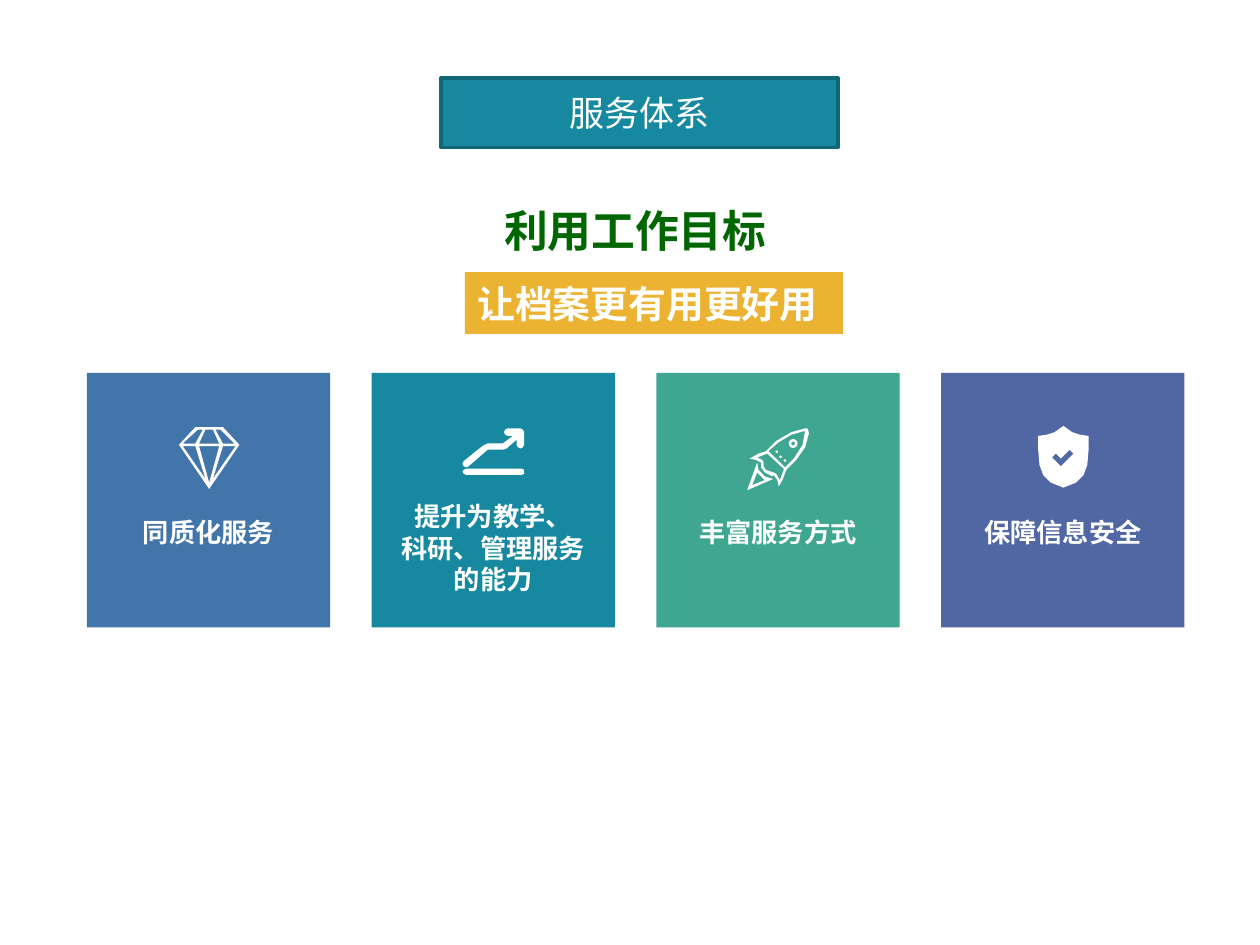
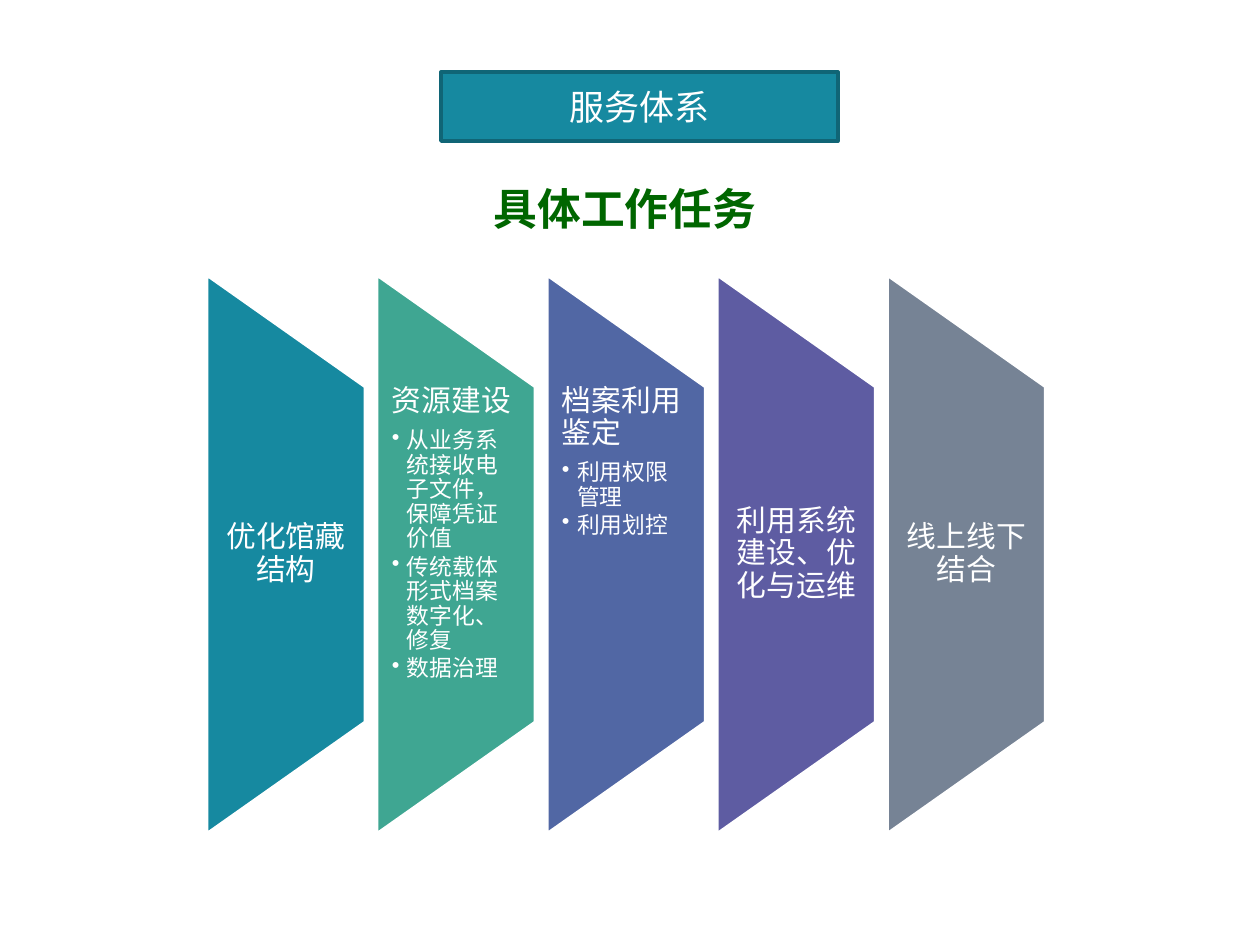
"""Build two slides on an archive's service system: its goals and its tasks."""
from math import cos, pi, sin

from pptx import Presentation, util as u
from pptx.dml.color import RGBColor
from pptx.enum import shapes, text
from pptx.oxml.ns import qn
from pptx.oxml.xmlchemy import OxmlElement

WHITE = RGBColor(0xFF, 0xFF, 0xFF)
TEAL = RGBColor(0x16, 0x89, 0xA0)
EDGE = RGBColor(0x10, 0x65, 0x76)
GREEN = RGBColor(0x00, 0x66, 0x00)
GOLD = RGBColor(0xEC, 0xB2, 0x31)
BLUE = RGBColor(0x42, 0x76, 0xAA)
MINT = RGBColor(0x3F, 0xA6, 0x92)
NAVY = RGBColor(0x51, 0x67, 0xA4)
PLUM = RGBColor(0x5E, 0x5C, 0xA2)
GREY = RGBColor(0x76, 0x83, 0x95)
HAN = "Noto Sans CJK SC"
LATIN = "Calibri"
LEFT, MID = text.PP_ALIGN.LEFT, text.PP_ALIGN.CENTER
RECT = shapes.MSO_SHAPE.RECTANGLE


def disc(x, y, r, n=16):
    return [(x + r * cos(2 * pi * k / n), y + r * sin(2 * pi * k / n)) for k in range(n)]


# Outlines in hundredths of an inch
GEM = [
    [(1, 15), (14, 1), (36, 1), (49, 15), (25, 50)],
    [(34, 3), (45, 14), (36, 14), (30, 3)],
    [(28, 3), (33, 14), (17, 14), (22, 3)],
    [(16, 3), (20, 3), (14, 14), (4, 14)],
    [(4, 16), (14, 16), (22, 42)],
    [(25, 45), (17, 16), (33, 16)],
    [(28, 42), (36, 16), (46, 16)],
]
TREND = [
    [(3, 34), (47, 34), (49, 35), (49, 38), (47, 39), (3, 39), (1, 38), (0, 36), (1, 35)],
    [(36, 2), (46, 2), (48, 3), (49, 5), (49, 15), (48, 17), (46, 18), (44, 17), (43, 15),
     (43, 11), (35, 18), (32, 19), (20, 19), (5, 32), (3, 33), (1, 32), (0, 30), (1, 28),
     (16, 16), (20, 14), (32, 14), (40, 8), (36, 8), (34, 7), (33, 5), (34, 3)],
]
ROCKET = [
    [(8, 29), (0, 51), (21, 42), (20, 42), (14, 40), (9, 35)],
    [(4, 47), (8, 37), (10, 39), (14, 43)],
    [(48, 2), (46, 2), (35, 5), (23, 12), (15, 20), (9, 22), (2, 26), (7, 27), (11, 29),
     (11, 33), (14, 37), (20, 40), (21, 39), (24, 43), (25, 48), (28, 43), (31, 35),
     (39, 27), (46, 17), (49, 6)],
    [(29, 35), (26, 43), (23, 38), (21, 37), (15, 35), (13, 32), (13, 29), (12, 27),
     (8, 25), (16, 22), (29, 34)],
    [(37, 26), (30, 33), (17, 20), (25, 13), (35, 7), (46, 4), (44, 15)],
    disc(36.5, 14, 3.5), disc(36.5, 14, 1.5),
    disc(23.5, 20.5, 1), disc(26.5, 24.5, 1), disc(30, 27.5, 1),
]
SHIELD = [
    [(45, 8), (38, 7), (32, 5), (25, 0), (18, 5), (12, 7), (5, 8), (5, 19), (6, 31),
     (9, 39), (15, 45), (25, 49), (35, 45), (41, 39), (44, 31), (45, 19)],
    [(23, 32), (16, 25), (19, 22), (23, 26), (30, 19), (33, 22)],
]

TOPIC = "服务体系"
GOAL = "利用工作目标"
MOTTO = "让档案更有用更好用"
CARDS = [
    (BLUE, GEM, ["同质化服务"], 0.5),
    (TEAL, TREND, ["提升为教学、", "科研、管理服务", "的能力"], 0.75),
    (MINT, ROCKET, ["丰富服务方式"], 0.5),
    (NAVY, SHIELD, ["保障信息安全"], 0.5),
]
TASK = "具体工作任务"
PANELS = [
    (TEAL, "优化馆藏结构", []),
    (MINT, "资源建设", ["从业务系统接收电子文件，保障凭证价值",
                    "传统载体形式档案数字化、修复", "数据治理"]),
    (NAVY, "档案利用鉴定", ["利用权限管理", "利用划控"]),
    (PLUM, "利用系统建设、优化与运维", []),
    (GREY, "线上线下结合", []),
]


def box(*at):
    return [u.Inches(v) for v in at]


def style(para, size, color=WHITE, bold=False, align=MID, latin=HAN):
    para.alignment = align
    font = para.font
    font.size, font.bold, font.name = u.Pt(size), bold, latin
    font.color.rgb = color
    east = OxmlElement("a:ea")
    east.set("typeface", HAN)
    para._p.pPr.find(qn("a:defRPr")).append(east)


def paint(shape, fill, line=None):
    shape.shadow.inherit = False
    shape.fill.solid()
    shape.fill.fore_color.rgb = fill
    if line is None:
        shape.line.fill.background()
    else:
        shape.line.color.rgb, shape.line.width = line, u.Pt(2)


def block(slide, at, fill, lines, size, line=None, drop=0, **look):
    shape = slide.shapes.add_shape(RECT, *box(*at))
    paint(shape, fill, line)
    frame = shape.text_frame
    frame.word_wrap, frame.vertical_anchor = True, text.MSO_ANCHOR.MIDDLE
    frame.margin_top = u.Inches(0.05 + drop)
    frame.text = "\n".join(lines)
    for para in frame.paragraphs:
        style(para, size, **look)


def start(deck, title, x, y, bar):
    slide = deck.slides.add_slide(deck.slide_layouts[5])
    head = slide.shapes.title
    head.left, head.top, head.width, head.height = box(x, y, 2.31, 0.52)
    frame = head.text_frame
    frame.text, frame.word_wrap = title, False
    frame.auto_size, frame.vertical_anchor = text.MSO_AUTO_SIZE.NONE, text.MSO_ANCHOR.TOP
    style(frame.paragraphs[0], 25, GREEN, True, LEFT)
    block(slide, (3.5, bar, 3.15, 0.55), TEAL, [TOPIC], 20, EDGE, latin=LATIN)
    return slide


def icon(slide, loops, x, y):
    loops = [[(u.Inches(x + a / 100), u.Inches(y + b / 100)) for a, b in loop]
             for loop in loops]
    pen = slide.shapes.build_freeform(*loops[0][0])
    for loop in loops:
        if loop is not loops[0]:
            pen.move_to(*loop[0])
        pen.add_line_segments(loop[1:], close=True)
    paint(pen.convert_to_shape(), WHITE)


def bullet(para):
    props = para._p.get_or_add_pPr()
    props.set("marL", str(u.Inches(0.12)))
    props.set("indent", str(-u.Inches(0.12)))
    mark = OxmlElement("a:buChar")
    mark.set("char", "•")
    props.append(mark)


def panel(slide, mid, fill, name, points):
    long, wide, high = 4.44, 1.26, 2.67
    center = 4.4
    shape = slide.shapes.add_shape(shapes.MSO_SHAPE.FLOWCHART_MANUAL_OPERATION,
                                   *box(mid - long / 2, center - wide / 2, long, wide))
    shape.rotation = 270
    paint(shape, fill, WHITE)
    frame = slide.shapes.add_textbox(
        *box(mid - wide / 2, center - high / 2, wide, high)).text_frame
    frame.word_wrap = True
    frame.margin_left = frame.margin_right = u.Inches(0.12)
    frame.margin_top = frame.margin_bottom = 0
    frame.vertical_anchor = text.MSO_ANCHOR.TOP if points else text.MSO_ANCHOR.MIDDLE
    frame.text = "\n".join([name, *points])
    for k, para in enumerate(frame.paragraphs):
        para.line_spacing, para.space_after = 0.9, u.Pt(2 if k else 6)
        if k:
            para.level = 1
            bullet(para)
        style(para, 13 if k else 17, align=LEFT if points else MID,
              latin=LATIN if k else HAN)


def main():
    deck = Presentation()
    deck.slide_width, deck.slide_height = box(10, 7.5)

    goals = start(deck, GOAL, 3.9, 1.57, 0.62)
    block(goals, (3.69, 2.16, 3, 0.49), GOLD, [MOTTO], 21.6, bold=True, align=LEFT)
    for k, (fill, loops, lines, drop) in enumerate(CARDS):
        x, y = 0.69 + 2.26 * k, 2.96
        block(goals, (x, y, 1.93, 2.02), fill, lines, 15, drop=drop, bold=True)
        icon(goals, loops, x + 0.72, y + 0.42)

    tasks = start(deck, TASK, 3.82, 1.39, 0.57)
    for k, part in enumerate(PANELS):
        panel(tasks, 2.27 + 1.35 * k, *part)

    deck.save("out.pptx")


if __name__ == "__main__":
    main()
